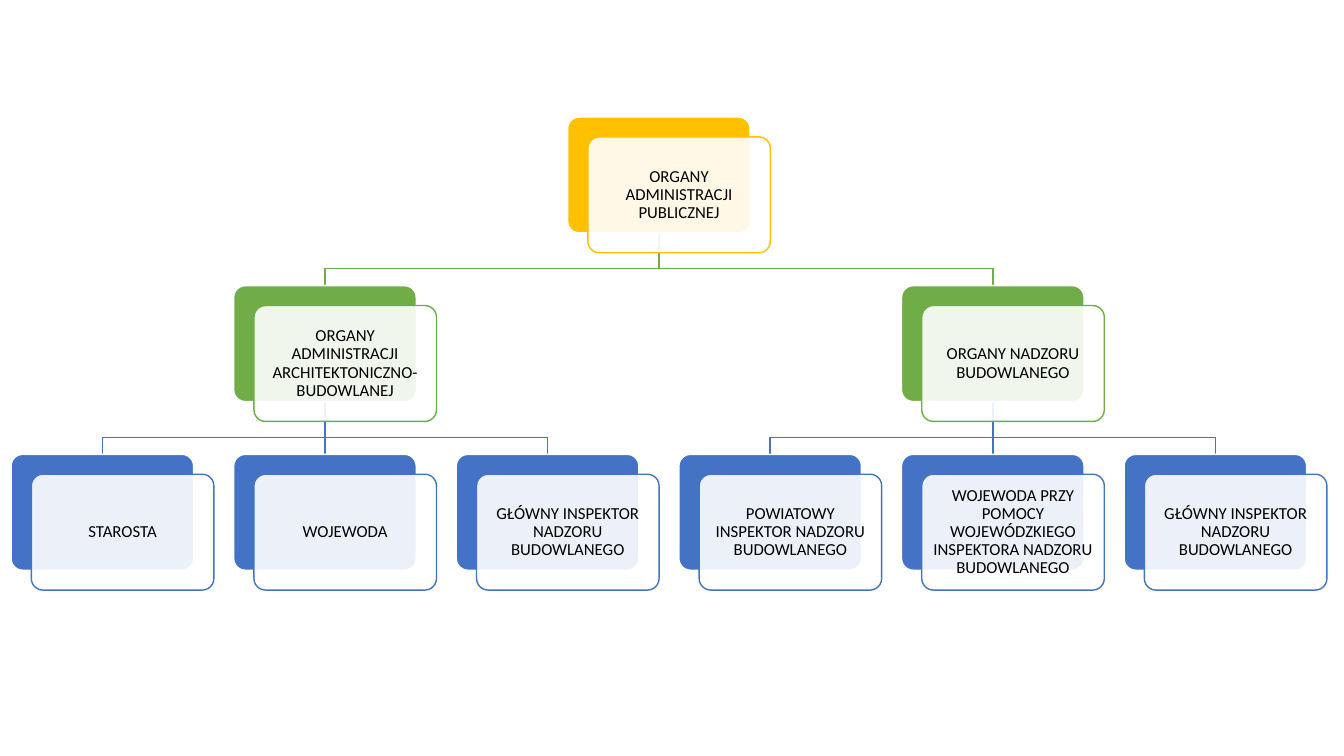
import pptx
import pptx.util
import pptx.dml.color
import pptx.enum.shapes
import pptx.enum.text
import pptx.oxml
import pptx.oxml.ns
import lxml.etree

Cm = pptx.util.Cm
Pt = pptx.util.Pt
COLORS = {"gold": "FFC000", "green": "70AD47", "blue": "4472C4", "white": "FFFFFF", "black": "000000"}
LEVEL_COLORS = ["gold", "green", "blue"]
LEFT, TOP = 0.28, 2.95
COLUMN_STEP, LEVEL_STEP = 5.61, 4.25
CARD_WIDTH, CARD_HEIGHT = 4.6, 2.92
OFFSET_X, OFFSET_Y = 0.51, 0.5
BEND = 0.9

ORGANS = [
    ("ORGANY ADMINISTRACJI PUBLICZNEJ", 0, 2.5, None),
    ("ORGANY ADMINISTRACJI ARCHITEKTONICZNO-BUDOWLANEJ", 1, 1, 2.5),
    ("STAROSTA", 2, 0, 1),
    ("WOJEWODA", 2, 1, 1),
    ("GŁÓWNY INSPEKTOR NADZORU BUDOWLANEGO", 2, 2, 1),
    ("ORGANY NADZORU BUDOWLANEGO", 1, 4, 2.5),
    ("POWIATOWY INSPEKTOR NADZORU BUDOWLANEGO", 2, 3, 4),
    ("WOJEWODA PRZY POMOCY WOJEWÓDZKIEGO INSPEKTORA NADZORU BUDOWLANEGO", 2, 4, 4),
    ("GŁÓWNY INSPEKTOR NADZORU BUDOWLANEGO", 2, 5, 4),
]


def rgb(name):
    return pptx.dml.color.RGBColor.from_string(COLORS[name])


def add_card(page, left, top, fill, line):
    card = page.shapes.add_shape(
        pptx.enum.shapes.MSO_SHAPE.ROUNDED_RECTANGLE, Cm(left), Cm(top), Cm(CARD_WIDTH), Cm(CARD_HEIGHT))
    card.adjustments[0] = 0.1
    card.shadow.inherit = False
    card.fill.solid()
    card.fill.fore_color.rgb = rgb(fill)
    card.line.color.rgb = rgb(line)
    card.line.width = Pt(1)
    return card


deck = pptx.Presentation()
deck.slide_width = Cm(33.87)
deck.slide_height = Cm(19.05)
page = deck.slides.add_slide(deck.slide_layouts[6])

for text, level, column, parent in ORGANS:
    if parent is None:
        continue
    start_x, end_x = [Cm(LEFT + place * COLUMN_STEP + CARD_WIDTH / 2) for place in (parent, column)]
    end_y = Cm(TOP + level * LEVEL_STEP)
    start_y = Cm(TOP + (level - 1) * LEVEL_STEP + CARD_HEIGHT)
    if parent == column:
        link = page.shapes.add_connector(
            pptx.enum.shapes.MSO_CONNECTOR.STRAIGHT, start_x, start_y, end_x, end_y)
        lxml.etree.SubElement(link._element.spPr, pptx.oxml.ns.qn("a:effectLst"))
    else:
        bend_y = start_y + Cm(BEND)
        builder = page.shapes.build_freeform(start_x, start_y)
        builder.add_line_segments([(start_x, bend_y), (end_x, bend_y), (end_x, end_y)], close=False)
        link = builder.convert_to_shape()
        link.shadow.inherit = False
        link.fill.background()
    link.line.color.rgb = rgb(LEVEL_COLORS[level])
    link.line.width = Pt(1)

for text, level, column, parent in ORGANS:
    color = LEVEL_COLORS[level]
    left = LEFT + column * COLUMN_STEP
    top = TOP + level * LEVEL_STEP
    add_card(page, left, top, color, "white")
    box = add_card(page, left + OFFSET_X, top + OFFSET_Y, "white", color)
    white = box._element.spPr.find(".//" + pptx.oxml.ns.qn("a:srgbClr"))
    lxml.etree.SubElement(white, pptx.oxml.ns.qn("a:alpha")).set("val", "90000")
    frame = box.text_frame
    frame.word_wrap = True
    frame.vertical_anchor = pptx.enum.text.MSO_ANCHOR.MIDDLE
    frame.margin_left = frame.margin_right = frame.margin_top = frame.margin_bottom = Cm(0.12)
    frame.text = text
    para = frame.paragraphs[0]
    para.alignment = pptx.enum.text.PP_ALIGN.CENTER
    para.line_spacing = 0.9
    span = para.runs[0]
    span.font.name = "Calibri"
    span.font.size = Pt(12)
    span.font.color.rgb = rgb("black")

deck.save("out.pptx")
